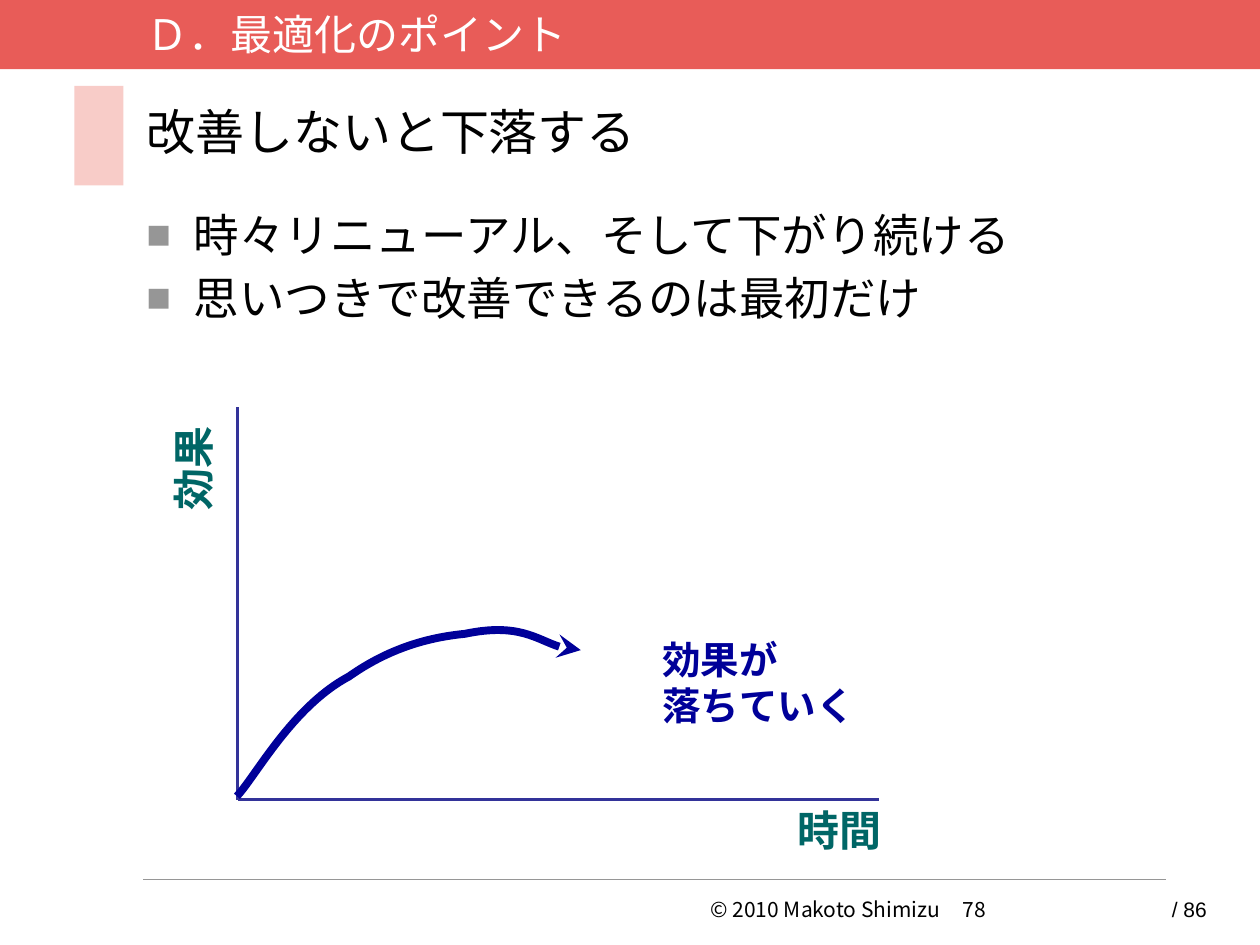
from dataclasses import dataclass

from lxml.etree import SubElement
from pptx import Presentation
from pptx.dml.color import RGBColor
from pptx.enum.lang import MSO_LANGUAGE_ID
from pptx.enum.shapes import MSO_CONNECTOR, MSO_SHAPE
from pptx.enum.text import MSO_ANCHOR, MSO_AUTO_SIZE, PP_ALIGN
from pptx.oxml.ns import qn
from pptx.util import Pt


@dataclass(frozen=True)
class Theme:
    """Colours, fonts and type sizes of the slide."""

    band: str = "E85C58"
    accent: str = "F8CCC8"
    grey: str = "969696"
    ink: str = "000000"
    white: str = "FFFFFF"
    axis: str = "333399"
    axis_name: str = "006666"
    trend: str = "000099"
    latin: str = "Arial"
    japanese: str = "Noto Sans CJK JP"
    title: int = 28
    body: int = 26
    label: int = 24
    note: int = 22
    footer: int = 12
    leading: float = 1.2


class SlideBuilder:
    """Draws styled elements on the current slide, with lengths in points."""

    def __init__(self, slide, theme):
        """Keep the slide and its theme."""
        self.slide = slide
        self.theme = theme

    def place(self, shape, box):
        """Move a shape to a left, top, width, height box."""
        shape.left, shape.top, shape.width, shape.height = map(Pt, box)

    def fill_text(self, shape, lines, size, color, font=None, bold=False,
                  align=PP_ALIGN.LEFT, anchor=MSO_ANCHOR.TOP, bullets=False):
        """Write one paragraph per line in a single style."""
        frame = shape.text_frame
        frame.word_wrap = True
        frame.auto_size = MSO_AUTO_SIZE.NONE
        frame.vertical_anchor = anchor
        for index, line in enumerate(lines):
            paragraph = frame.add_paragraph() if index else frame.paragraphs[0]
            paragraph.text = line
            if bullets:
                self.add_bullet(paragraph)
            paragraph.alignment = align
            paragraph.line_spacing = Pt(size * self.theme.leading)
            paragraph.space_before = Pt(size * 0.2 if index else 0)
            self.style_font(paragraph.font, size, color, font or self.theme.latin, bold)
            properties = paragraph._p.pPr.find(qn("a:defRPr"))
            SubElement(properties, qn("a:ea"), typeface=font or self.theme.latin)

    def style_font(self, font, size, color, name, bold):
        """Set the typeface, size, weight and colour of a font."""
        font.name, font.size, font.bold = name, Pt(size), bold
        font.color.rgb = RGBColor.from_string(color)
        font.language_id = MSO_LANGUAGE_ID.JAPANESE

    def add_bullet(self, paragraph):
        """Give a paragraph a hanging square bullet."""
        properties = paragraph._p.get_or_add_pPr()
        properties.set("marL", str(Pt(27)))
        properties.set("indent", str(-Pt(27)))
        bullet_color = SubElement(properties, qn("a:buClr"))
        SubElement(bullet_color, qn("a:srgbClr"), val=self.theme.grey)
        SubElement(properties, qn("a:buSzPct"), val="90000")
        SubElement(properties, qn("a:buFont"), typeface=self.theme.latin)
        SubElement(properties, qn("a:buChar"), char="■")

    def placeholder(self, index, box, lines, size, **style):
        """Move and fill a template placeholder."""
        shape = self.slide.placeholders[index]
        self.place(shape, box)
        self.fill_text(shape, lines, size, self.theme.ink, **style)

    def text(self, box, line, size, color, rotation=0, inset=True, **style):
        """Add a text box with one paragraph."""
        shape = self.slide.shapes.add_textbox(*map(Pt, box))
        shape.rotation = rotation
        if not inset:
            frame = shape.text_frame
            frame.margin_left = frame.margin_right = 0
            frame.margin_top = frame.margin_bottom = 0
        self.fill_text(shape, [line], size, color, **style)

    def block(self, box, color):
        """Add a plain filled rectangle."""
        shape = self.slide.shapes.add_shape(MSO_SHAPE.RECTANGLE, *map(Pt, box))
        shape.shadow.inherit = False
        shape.fill.solid()
        shape.fill.fore_color.rgb = RGBColor.from_string(color)
        shape.line.fill.background()

    def line(self, start, end, color, width):
        """Add a straight line."""
        connector = self.slide.shapes.add_connector(
            MSO_CONNECTOR.STRAIGHT, *map(Pt, start + end))
        connector.line.color.rgb = RGBColor.from_string(color)
        connector.line.width = Pt(width)
        SubElement(connector._element.spPr, qn("a:effectLst"))

    def curved_arrow(self, start, controls, color, width):
        """Add a cubic curve, three controls per piece, with an arrowhead."""
        builder = self.slide.shapes.build_freeform(*map(Pt, start))
        builder.add_line_segments([tuple(map(Pt, point)) for point in controls], close=False)
        shape = builder.convert_to_shape()
        shape.shadow.inherit = False
        shape.fill.background()
        shape.line.color.rgb = RGBColor.from_string(color)
        shape.line.width = Pt(width)
        SubElement(shape.line._get_or_add_ln(), qn("a:tailEnd"), type="stealth")
        segments = list(shape._element.iter(qn("a:lnTo")))
        for first in range(0, len(segments), 3):
            outline = segments[first].getparent()
            curve = SubElement(outline, qn("a:cubicBezTo"))
            for segment in segments[first:first + 3]:
                curve.append(segment[0])
                outline.remove(segment)


def main():
    """Build the slide and save it."""
    presentation = Presentation()
    presentation.slide_width, presentation.slide_height = Pt(720), Pt(540)
    theme = Theme()
    slide = presentation.slides.add_slide(presentation.slide_layouts[1])
    page = SlideBuilder(slide, theme)

    page.block((0, 0, 720, 39.5), theme.band)
    page.block((42.5, 49, 28, 57), theme.accent)
    page.text((76.5, 3, 592, 32), "Ｄ．最適化のポイント", theme.label, theme.white,
              anchor=MSO_ANCHOR.MIDDLE)
    page.placeholder(0, (76.5, 43, 592, 64), ["改善しないと下落する"], theme.title,
                     anchor=MSO_ANCHOR.MIDDLE)
    page.placeholder(1, (76.5, 114.5, 592, 345.5),
                     ["時々リニューアル、そして下がり続ける", "思いつきで改善できるのは最初だけ"],
                     theme.body, font=theme.japanese, bullets=True)

    origin = (136, 457)
    for axis_end in ((136, 232.5), (502.5, 457)):
        page.line(origin, axis_end, theme.axis, 1.75)
    axis_style = dict(inset=False, bold=True, align=PP_ALIGN.RIGHT)
    page.text((258, 459.5, 246, 35), "時間", theme.label, theme.axis_name, **axis_style)
    page.text((6, 333.5, 204.5, 24.5), "効果", theme.label, theme.axis_name,
              rotation=270, **axis_style)

    page.curved_arrow((135.4, 455), [
        (146.2, 443.5), (167, 403.9), (199.4, 386.6),
        (221.8, 370.8), (244.1, 364.3), (265.7, 362.2),
        (296.6, 355.7), (321.1, 373.7), (331.9, 371.5),
    ], theme.trend, 4.5)
    page.text((371.5, 360, 139, 60.5), "効果が\n落ちていく", theme.note, theme.trend, bold=True)

    page.line((82, 502.5), (666, 502.5), theme.grey, 0.75)
    page.text((297.5, 508.5, 374.5, 20), "© 2010 Makoto Shimizu\t78", theme.footer,
              theme.ink, font=theme.japanese, align=PP_ALIGN.CENTER)
    page.text((662.5, 508.5, 57, 21.5), "/ 86", theme.footer, theme.ink)
    presentation.save("out.pptx")


if __name__ == "__main__":
    main()
